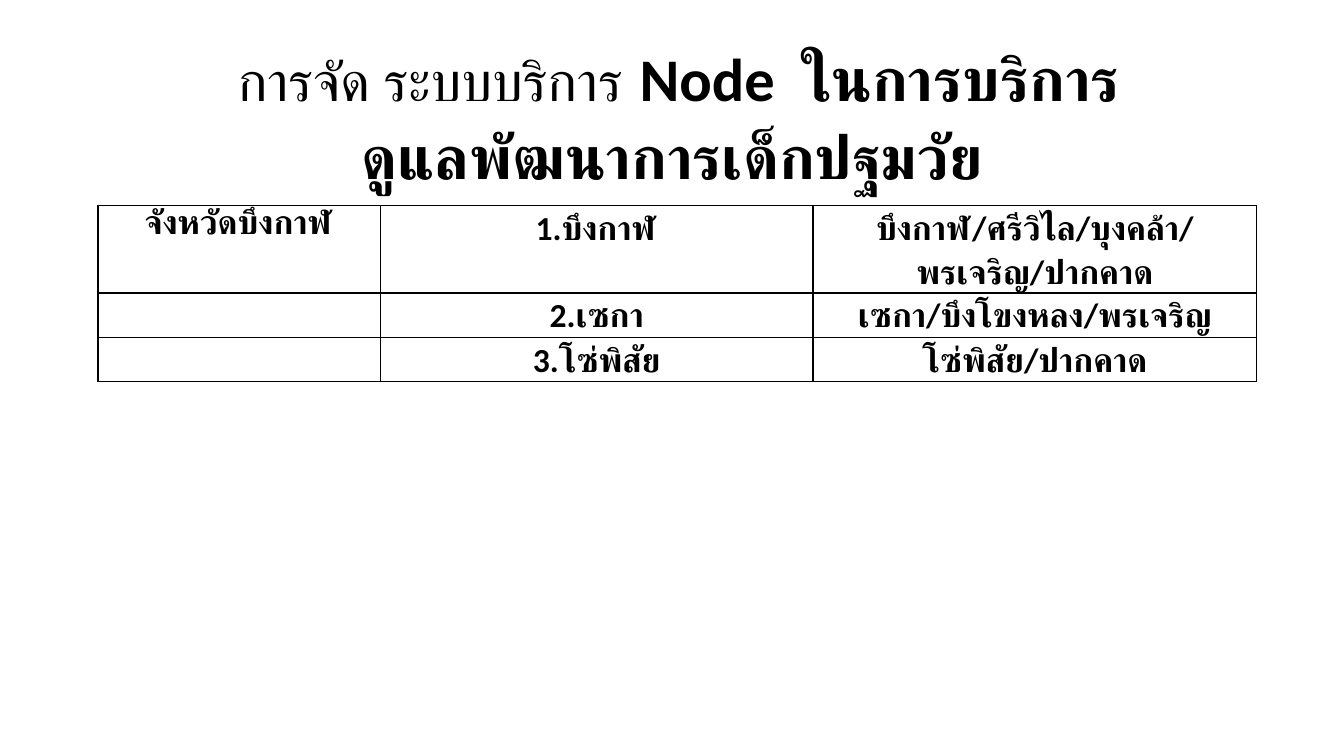
import dataclasses

import lxml.etree
import pptx
import pptx.dml.color
import pptx.enum.text
import pptx.oxml.ns
import pptx.util

Inches = pptx.util.Inches
Pt = pptx.util.Pt

SLIDE_WIDTH = 10
SLIDE_HEIGHT = SLIDE_WIDTH * 9 / 16


@dataclasses.dataclass(frozen=True)
class Theme:
    font: str = "Calibri"
    ink: str = "000000"
    paper: str = "FFFFFF"
    title_size: float = 32.4
    title_lead_size: float = 29.7
    table_size: float = 18
    line_spacing: float = 1.07
    border_width: float = 1


def add_text(paragraph, text, *, font, size, color, bold=False):
    run = paragraph.add_run()
    run.text = text
    run.font.name = font
    run.font.size = Pt(size)
    run.font.bold = bold
    run.font.color.rgb = pptx.dml.color.RGBColor.from_string(color)


class SlideBuilder:
    def __init__(self, slide, theme):
        self.slide = slide
        self.theme = theme

    def background(self):
        fill = self.slide.background.fill
        fill.solid()
        fill.fore_color.rgb = pptx.dml.color.RGBColor.from_string(self.theme.paper)

    def center(self, paragraph):
        paragraph.alignment = pptx.enum.text.PP_ALIGN.CENTER
        paragraph.line_spacing = self.theme.line_spacing

    def title(self, lead, lines, left, top, width, height):
        """Add a centred heading with a light lead-in and bold lines after it."""
        theme = self.theme
        shape = self.slide.shapes.add_textbox(
            Inches(left), Inches(top), Inches(width), Inches(height))
        frame = shape.text_frame
        frame.word_wrap = True
        frame.vertical_anchor = pptx.enum.text.MSO_ANCHOR.MIDDLE
        frame.margin_left = frame.margin_right = Inches(0.07)
        frame.margin_top = frame.margin_bottom = Inches(0.04)
        paragraph = frame.paragraphs[0]
        self.center(paragraph)
        add_text(paragraph, lead, font=theme.font,
                 size=theme.title_lead_size, color=theme.ink)
        for index, line in enumerate(lines):
            if index:
                paragraph.add_line_break()
            add_text(paragraph, line, font=theme.font,
                     size=theme.title_size, color=theme.ink, bold=True)

    def table(self, rows, left, top, column_widths, row_heights):
        shape = self.slide.shapes.add_table(
            len(row_heights), len(column_widths), Inches(left), Inches(top),
            Inches(sum(column_widths)), Inches(sum(row_heights)))
        table = shape.table
        table.first_row = table.horz_banding = False
        for column, width in zip(table.columns, column_widths):
            column.width = Inches(width)
        for row, height, texts in zip(table.rows, row_heights, rows):
            row.height = Inches(height)
            for cell, text in zip(row.cells, texts):
                self.cell(cell, text)

    def cell(self, cell, text):
        theme = self.theme
        cell.margin_left = cell.margin_right = Inches(0.07)
        cell.margin_top = cell.margin_bottom = 0
        self.borders(cell)
        cell.fill.background()
        paragraph = cell.text_frame.paragraphs[0]
        self.center(paragraph)
        if text:
            add_text(paragraph, text, font=theme.font, size=theme.table_size,
                     color=theme.ink, bold=True)

    def borders(self, cell):
        qn = pptx.oxml.ns.qn
        properties = cell._tc.get_or_add_tcPr()
        for side in ("a:lnL", "a:lnR", "a:lnT", "a:lnB"):
            line = lxml.etree.SubElement(
                properties, qn(side), w=str(Pt(self.theme.border_width)))
            fill = lxml.etree.SubElement(line, qn("a:solidFill"))
            lxml.etree.SubElement(fill, qn("a:srgbClr"), val=self.theme.ink)


def main():
    presentation = pptx.Presentation()
    presentation.slide_width = Inches(SLIDE_WIDTH)
    presentation.slide_height = Inches(SLIDE_HEIGHT)
    slide = presentation.slides.add_slide(presentation.slide_layouts[6])
    builder = SlideBuilder(slide, Theme())
    builder.background()
    builder.title(
        " การจัด ระบบบริการ",
        [" Node  ในการบริการ", "ดูแลพัฒนาการเด็กปฐมวัย"],
        left=0.69, top=0.3, width=8.62, height=1.09)
    builder.table(
        [
            ("จังหวัดบึงกาฬ", "1.บึงกาฬ", "บึงกาฬ/ศรีวิไล/บุงคล้า/พรเจริญ/ปากคาด"),
            ("", "2.เซกา", "เซกา/บึงโขงหลง/พรเจริญ"),
            ("", "3.โซ่พิสัย", "โซ่พิสัย/ปากคาด"),
        ],
        left=0.73, top=1.53,
        column_widths=(2.1, 3.22, 3.3), row_heights=(0.65, 0.33, 0.33))
    presentation.save("out.pptx")


if __name__ == "__main__":
    main()
